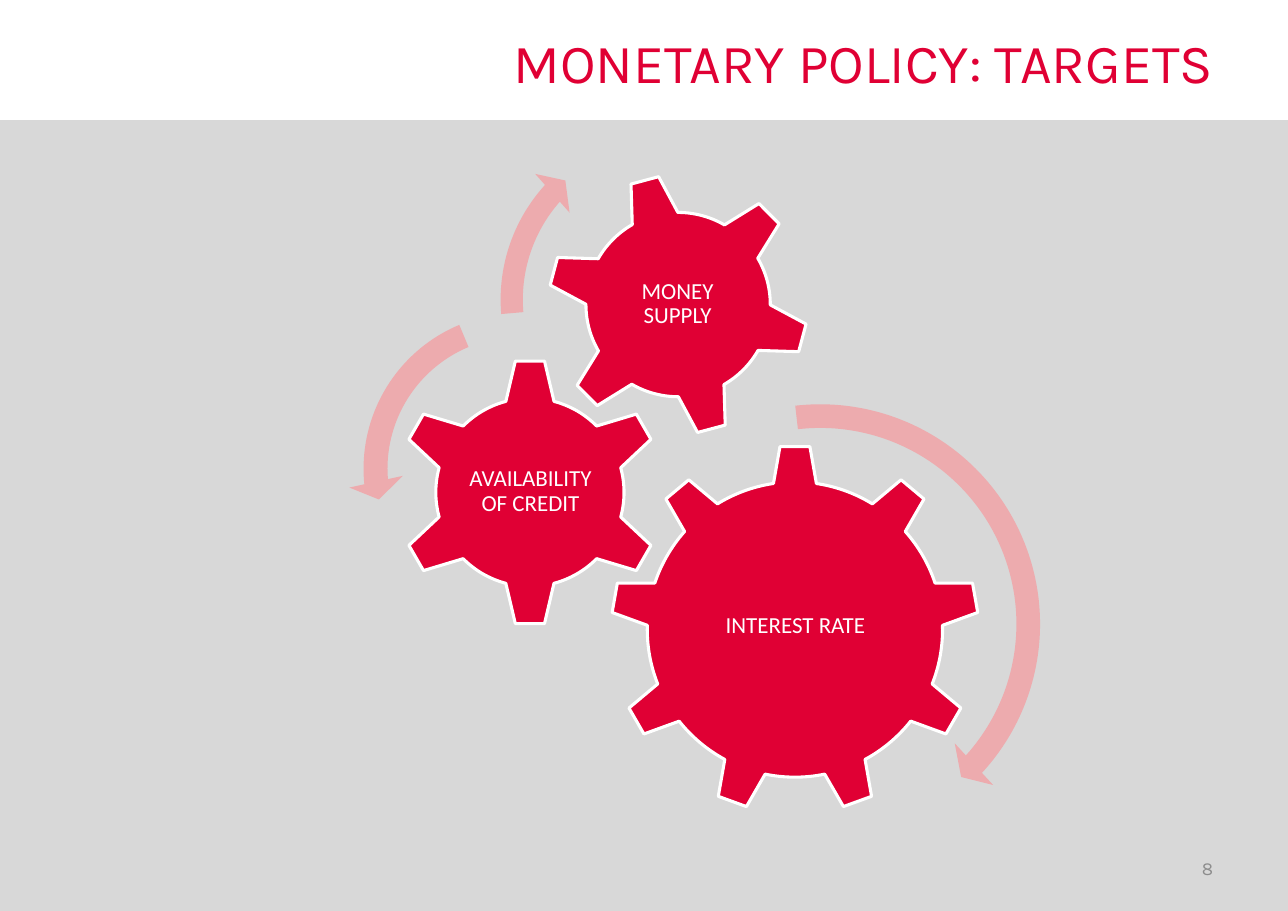
import pptx
import pptx.util
import pptx.dml.color
import pptx.enum.shapes
import pptx.enum.text

PX = 9144
RED = "E00034"
PINK = "EDABAE"
WHITE = "FFFFFF"
SHAPES = pptx.enum.shapes.MSO_SHAPE
ALIGN = pptx.enum.text.PP_ALIGN


def px(*lengths):
    return [pptx.util.Emu(length * PX) for length in lengths]


def color(value):
    return pptx.dml.color.RGBColor.from_string(value)


def add_filled_shape(page, kind, place, fill, outline=None, rotation=0, adjustments=()):
    shape = page.shapes.add_shape(kind, *px(*place))
    shape.shadow.inherit = False
    shape.rotation = rotation
    shape.fill.solid()
    shape.fill.fore_color.rgb = color(fill)
    if outline:
        shape.line.color.rgb = color(outline)
        shape.line.width = pptx.util.Pt(2)
    else:
        shape.line.fill.background()
    for index, value in enumerate(adjustments):
        shape.adjustments[index] = value


def add_text(page, text, place, size, font, fill, align, inset=None, spacing=None):
    box = page.shapes.add_textbox(*px(*place))
    frame = box.text_frame
    frame.word_wrap = True
    frame.vertical_anchor = pptx.enum.text.MSO_ANCHOR.MIDDLE
    if inset is not None:
        margin = px(inset)[0]
        frame.margin_left = frame.margin_right = margin
        frame.margin_top = frame.margin_bottom = margin
    para = frame.paragraphs[0]
    para.alignment = align
    if spacing:
        para.line_spacing = spacing
    span = para.add_run()
    span.text = text
    span.font.size = pptx.util.Pt(size)
    span.font.name = font
    span.font.color.rgb = color(fill)


def add_gear(page, kind, place, label, label_place, rotation=0):
    add_filled_shape(page, kind, place, RED, outline=WHITE, rotation=rotation)
    add_text(page, label, label_place, size=15, font="Calibri", fill=WHITE,
             align=ALIGN.CENTER, inset=2, spacing=0.9)


def add_turn_arrow(page, kind, place, adjustments):
    add_filled_shape(page, kind, place, PINK, adjustments=adjustments)


def main():
    deck = pptx.Presentation()
    deck.slide_width, deck.slide_height = px(1169, 827)
    page = deck.slides.add_slide(deck.slide_layouts[6])

    add_filled_shape(page, SHAPES.RECTANGLE, (0, 109, 1169, 718), "D8D8D8")
    add_text(page, "MONETARY POLICY: TARGETS", (299, 20, 812, 72),
             size=36, font="Karla", fill=RED, align=ALIGN.RIGHT)

    add_gear(page, SHAPES.GEAR_9, (554, 404, 335, 335),
             "INTEREST RATE", (622, 482, 200, 172))
    add_gear(page, SHAPES.GEAR_6, (359, 325, 244, 244),
             "AVAILABILITY OF CREDIT", (421, 386, 121, 120))
    add_gear(page, SHAPES.GEAR_6, (496, 157, 239, 239),
             "MONEY SUPPLY", (549, 209, 132, 134), rotation=345)

    add_turn_arrow(page, SHAPES.CIRCULAR_ARROW, (530, 352, 429, 429),
                   (0.05, 2.99, 25.42, 158.08, 0.06))
    add_turn_arrow(page, SHAPES.LEFT_CIRCULAR_ARROW, (316, 270, 311, 311),
                   (0.07, 4.3, 104.89, 148.38, 0.08))
    add_turn_arrow(page, SHAPES.CIRCULAR_ARROW, (441, 104, 336, 336),
                   (0.06, 3.94, 133.14, 105.08, 0.07))

    add_text(page, "8", (838, 766, 273, 44),
             size=12, font="Karla", fill="8C8C8C", align=ALIGN.RIGHT)
    deck.save("out.pptx")


if __name__ == "__main__":
    main()
